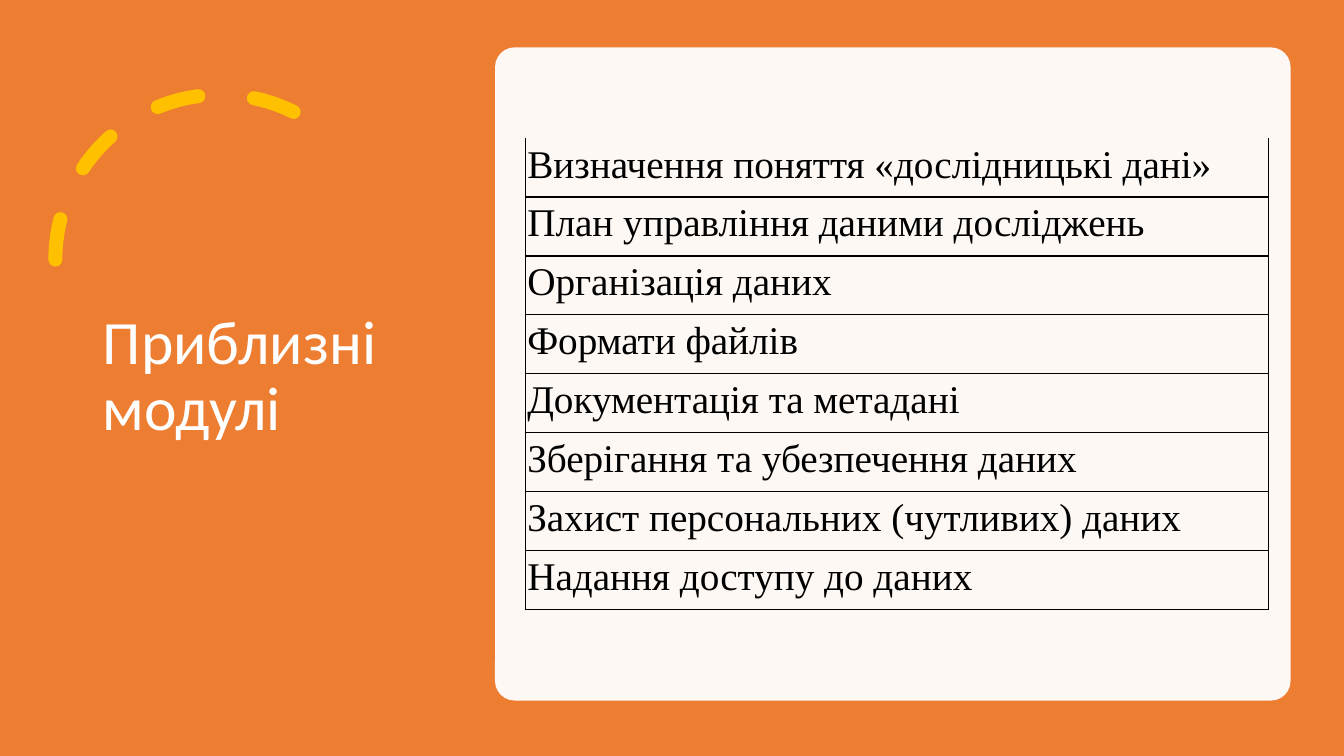
"""Build a slide listing the approximate course modules."""
from lxml.etree import SubElement
from pptx import Presentation
from pptx.dml.color import RGBColor
from pptx.enum.dml import MSO_LINE
from pptx.enum.shapes import MSO_SHAPE
from pptx.enum.text import MSO_ANCHOR, PP_ALIGN
from pptx.oxml import parse_xml
from pptx.oxml.ns import nsdecls, qn
from pptx.util import Inches, Pt

TITLE = "Приблизні модулі"
MODULES = [
    "Визначення поняття «дослідницькі дані»",
    "План управління даними досліджень",
    "Організація даних",
    "Формати файлів",
    "Документація та метадані",
    "Зберігання та убезпечення даних",
    "Захист персональних (чутливих) даних",
    "Надання доступу до даних",
]
ORANGE, GOLD, WHITE, BLACK = "ED7D31", "FFC000", "FFFFFF", "000000"
WIDE, HIGH = 13.33, 7.5
ROW = 0.585


def color(code):
    """Turn a hex string into a colour."""
    return RGBColor.from_string(code)


def write(frame, text, size, font, ink, space, after=0, align=PP_ALIGN.LEFT):
    """Put one formatted paragraph in a text frame."""
    frame.text = text
    para = frame.paragraphs[0]
    para.alignment, para.line_spacing = align, space
    para.space_before, para.space_after = Pt(0), Pt(after)
    face = para.runs[0].font
    face.size, face.name = Pt(size), font
    face.color.rgb = color(ink)


def shape(slide, kind, box, fill=None):
    """Add a preset shape without outline or shadow."""
    part = slide.shapes.add_shape(kind, *map(Inches, box))
    part.shadow.inherit = False
    part.line.fill.background()
    if fill:
        part.fill.solid()
        part.fill.fore_color.rgb = color(fill)
    else:
        part.fill.background()
    return part


def border(cell, sides):
    """Draw thin black lines on the named sides and none elsewhere."""
    props = cell._tc.get_or_add_tcPr()
    for spot, side in enumerate("LRTB"):
        paint = "<a:noFill/>"
        if side in sides:
            paint = f'<a:solidFill><a:srgbClr val="{BLACK}"/></a:solidFill>'
        line = f'<a:ln{side} {nsdecls("a")} w="{Pt(1)}">{paint}</a:ln{side}>'
        props.insert(spot, parse_xml(line))


def heading(slide):
    """Place the title over the orange backdrop."""
    title = slide.shapes.title
    back = shape(slide, MSO_SHAPE.RECTANGLE, (0, 0, WIDE, HIGH), ORANGE)
    arc = shape(slide, MSO_SHAPE.ARC, (0.55, 0.94, 3.27, 3.27))
    arc.adjustments[0], arc.adjustments[1] = 146.13, 0
    arc.element.spPr.find(qn("a:xfrm")).set("flipH", "1")
    arc.line.color.rgb = color(GOLD)
    arc.line.width = Pt(10)
    arc.line.dash_style = MSO_LINE.DASH
    arc.line._get_or_add_ln().set("cap", "rnd")
    for part in (back, arc):
        title.element.addprevious(part.element)
    title.left, title.top = Inches(0.92), Inches(0.7)
    title.width, title.height = Inches(3.23), Inches(6.09)
    frame = title.text_frame
    frame.word_wrap = True
    frame.vertical_anchor = MSO_ANCHOR.MIDDLE
    write(frame, TITLE, 44, "Calibri", WHITE, 0.9)


def panel(slide):
    """Add the pale card behind the table."""
    card = shape(slide, MSO_SHAPE.ROUNDED_RECTANGLE,
                 (4.91, 0.47, 7.89, 6.48), WHITE)
    card.adjustments[0] = 0.03
    tint = card.element.spPr.find(qn("a:solidFill"))[0]
    SubElement(tint, qn("a:alpha")).set("val", "95000")


def table(slide):
    """List the modules, one to a row."""
    count = len(MODULES)
    box = map(Inches, (5.21, 1.37, 7.37, ROW * count))
    grid = slide.shapes.add_table(count, 1, *box).table
    grid.first_row = grid.horz_banding = False
    for spot, name in enumerate(MODULES):
        grid.rows[spot].height = Inches(ROW)
        cell = grid.cell(spot, 0)
        cell.margin_left = cell.margin_right = cell.margin_top = Inches(0.02)
        cell.margin_bottom = 0
        cell.fill.background()
        border(cell, "LRTB" if spot else "LRB")
        align = PP_ALIGN.JUSTIFY if spot > 1 else PP_ALIGN.LEFT
        write(cell.text_frame, name, 28, "Times New Roman", BLACK, 1.07,
              after=8, align=align)


def main():
    """Build and save the deck."""
    deck = Presentation()
    deck.slide_width, deck.slide_height = Inches(WIDE), Inches(HIGH)
    slide = deck.slides.add_slide(deck.slide_layouts[5])
    heading(slide)
    panel(slide)
    table(slide)
    deck.save("out.pptx")


if __name__ == "__main__":
    main()
